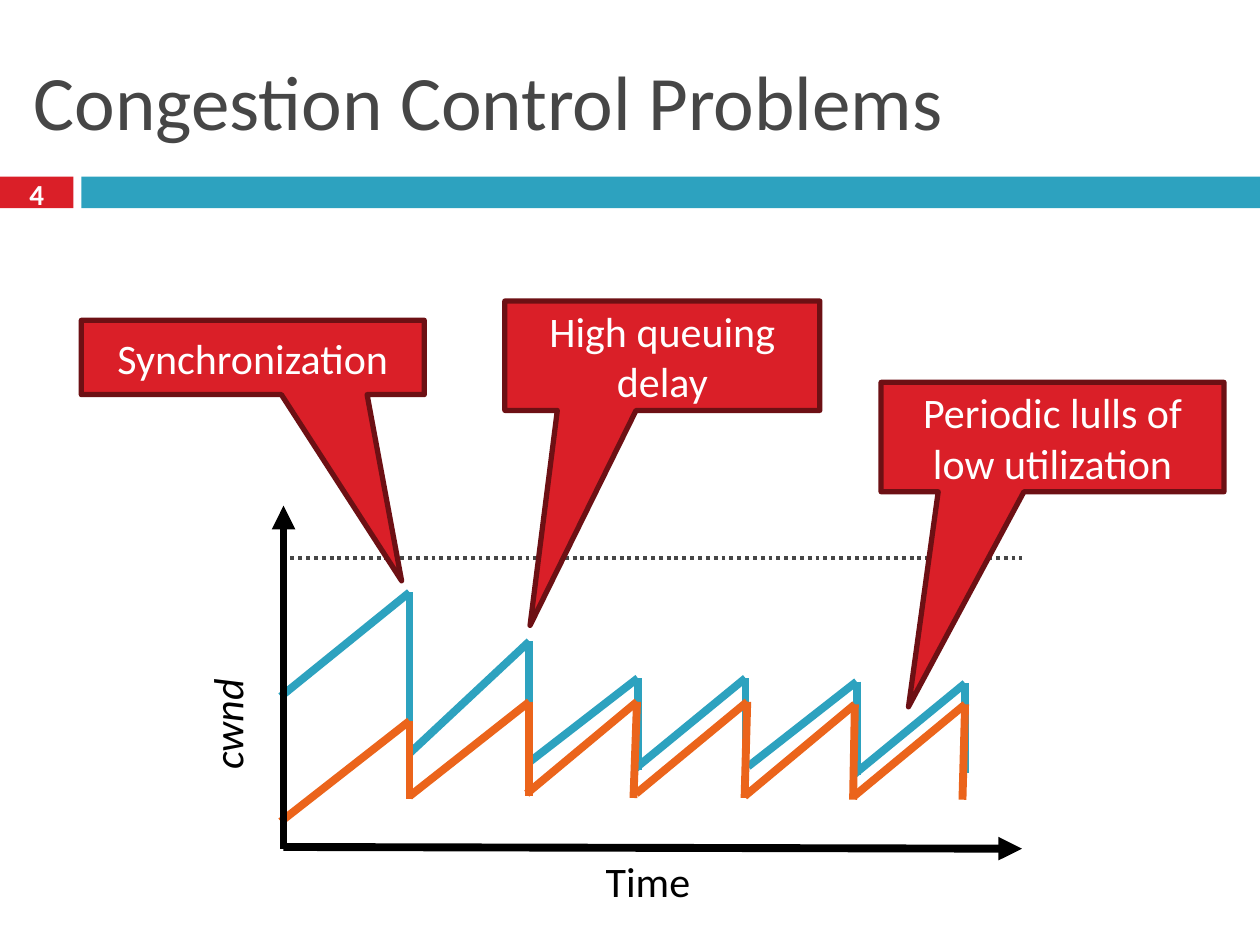
"""Build the congestion control problems slide with its cwnd sawtooth chart."""
from lxml import etree
from pptx import Presentation
from pptx import util as u
from pptx.dml.color import RGBColor
from pptx.enum import dml, shapes, text
from pptx.oxml.ns import qn

RED = RGBColor(0xDA, 0x1F, 0x28)
DARK_RED = RGBColor(0x6D, 0x10, 0x14)
TEAL = RGBColor(0x2D, 0xA2, 0xBF)
ORANGE = RGBColor(0xEB, 0x64, 0x1B)
GRAY = RGBColor(0x46, 0x46, 0x46)
BLACK = RGBColor(0, 0, 0)
WHITE = RGBColor(0xFF, 0xFF, 0xFF)
FONT = "Calibri"
LEFT, CENTER = text.PP_ALIGN.LEFT, text.PP_ALIGN.CENTER
TOP, MIDDLE = text.MSO_ANCHOR.TOP, text.MSO_ANCHOR.MIDDLE

TITLE = "Congestion Control Problems"
BARS = [((0, 101, 42, 18), RED), ((46.5, 101, 673.5, 18), TEAL)]
CALLOUTS = [
    ("Synchronization", (46.5, 183, 196, 42.5), (0.434, 3.004)),
    ("Periodic lulls of low utilization", (503.5, 218.5, 196, 62.5), (-0.42, 2.466)),
    ("High queuing delay", (288.5, 172, 180, 62.5), (-0.42, 2.466)),
]
FLOWS = [
    (TEAL, [
        ((160.5, 398), (234, 338.5), (234, 429)),
        ((234, 430.5), (302.5, 366.5), (302.5, 435.5)),
        ((302.5, 435.5), (364.5, 387.5), (364.5, 440)),
        ((362, 440), (426, 387.5), (426, 440)),
        ((427.5, 438), (489.5, 389.5), (489.5, 443)),
        ((487.5, 443), (551.5, 390.5), (551.5, 442)),
    ]),
    (ORANGE, [
        ((160.5, 469.5), (234, 412), (234, 456.5)),
        ((234, 455), (302.5, 401), (302.5, 455)),
        ((301, 453.5), (364, 401), (362, 456)),
        ((363.5, 453.5), (427, 401), (425.5, 456)),
        ((425.5, 455), (488.5, 402.5), (487.5, 457)),
        ((488, 455), (551.5, 402.5), (550, 457)),
    ]),
]
CAPACITY = ((161.5, 319), (584, 319))
TIME_AXIS = ((162, 484), (584, 485))
CWND_AXIS = ((162, 485), (162, 289))


def pts(values):
    return [u.Pt(v) for v in values]


def write(sp, words, size, color, align=LEFT, anchor=TOP, inset=(7.2, 3.6), bold=False, italic=False):
    tf = sp.text_frame
    tf.text = words
    tf.word_wrap = True
    tf.vertical_anchor = anchor
    tf.margin_left = tf.margin_right = u.Pt(inset[0])
    tf.margin_top = tf.margin_bottom = u.Pt(inset[1])
    p = tf.paragraphs[0]
    p.alignment = align
    font = p.runs[0].font
    font.name, font.size, font.bold, font.italic = FONT, u.Pt(size), bold, italic
    font.color.rgb = color


def add_box(s, kind, box, fill, line=None):
    sp = s.shapes.add_shape(kind, *pts(box))
    sp.shadow.inherit = False
    sp.fill.solid()
    sp.fill.fore_color.rgb = fill
    if line is None:
        sp.line.fill.background()
    else:
        sp.line.color.rgb = line
        sp.line.width = u.Pt(3)
    return sp


def add_line(s, start, end, color, width=4.5, dash=None, arrow=False):
    sp = s.shapes.add_connector(shapes.MSO_CONNECTOR.STRAIGHT, *pts(start + end))
    sp.line.color.rgb = color
    sp.line.width = u.Pt(width)
    if dash is not None:
        sp.line.dash_style = dash
    if arrow:
        etree.SubElement(sp.line._get_or_add_ln(), qn("a:tailEnd"), type="triangle")
    etree.SubElement(sp._element.spPr, qn("a:effectLst"))


def main():
    prs = Presentation()
    prs.slide_width, prs.slide_height = pts((720, 540))
    s = prs.slides.add_slide(prs.slide_layouts[5])

    title = s.shapes.title
    title.left, title.top, title.width, title.height = pts((12, 18, 696, 78))
    write(title, TITLE, 44, GRAY, anchor=MIDDLE)

    for box, color in BARS:
        add_box(s, shapes.MSO_SHAPE.RECTANGLE, box, color)
    number = s.shapes.add_textbox(*pts((0, 98.5, 42, 24)))
    write(number, "4", 16.6, WHITE, CENTER, MIDDLE, (0, 0), bold=True)

    add_line(s, *TIME_AXIS, BLACK, arrow=True)
    add_line(s, *CAPACITY, GRAY, 2.25, dml.MSO_LINE.ROUND_DOT)
    for color, teeth in FLOWS:
        for start, peak, drop in teeth:
            add_line(s, start, peak, color)
            add_line(s, peak, drop, color)
    add_line(s, *CWND_AXIS, BLACK, arrow=True)

    cwnd = s.shapes.add_textbox(*pts((88, 373.5, 97, 50)))
    cwnd.rotation = 270
    write(cwnd, "cwnd", 24, BLACK, italic=True)
    write(s.shapes.add_textbox(*pts((339, 485.5, 68.5, 36.5))), "Time", 24, BLACK)

    for words, box, tip in CALLOUTS:
        sp = add_box(s, shapes.MSO_SHAPE.RECTANGULAR_CALLOUT, box, RED, DARK_RED)
        sp.adjustments[0], sp.adjustments[1] = tip
        write(sp, words, 24, WHITE, CENTER, MIDDLE, (7.2, 0))

    prs.save("out.pptx")


if __name__ == "__main__":
    main()
